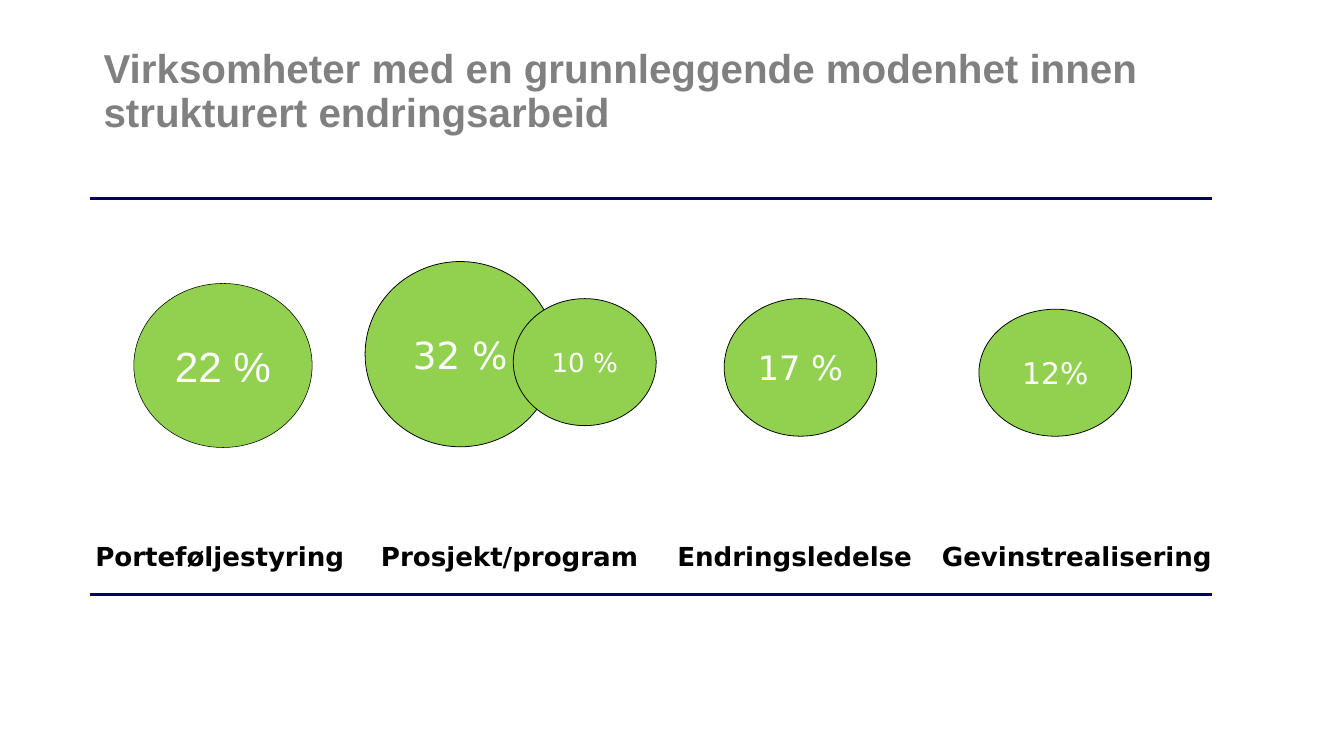
from dataclasses import dataclass

from lxml import etree
from pptx import Presentation
from pptx.dml.color import RGBColor
from pptx.enum.shapes import MSO_CONNECTOR, MSO_SHAPE
from pptx.enum.text import MSO_ANCHOR, MSO_AUTO_SIZE, PP_ALIGN
from pptx.oxml.ns import qn
from pptx.util import Inches, Pt

OVAL = MSO_SHAPE.OVAL
LINE = MSO_CONNECTOR.STRAIGHT
MID, LOW, TOP = MSO_ANCHOR.MIDDLE, MSO_ANCHOR.BOTTOM, MSO_ANCHOR.TOP
LEFT, CENTER = PP_ALIGN.LEFT, PP_ALIGN.CENTER
GROW, FIXED = MSO_AUTO_SIZE.SHAPE_TO_FIT_TEXT, MSO_AUTO_SIZE.NONE


@dataclass(frozen=True)
class Theme:
    """Hold the colours, fonts and type sizes of the slide."""
    gray: str = "808080"
    navy: str = "000066"
    green: str = "92D050"
    black: str = "000000"
    white: str = "FFFFFF"
    sans: str = "Arial"
    wide: str = "DejaVu Sans"
    head: float = 38.4
    label: float = 24.9


@dataclass(frozen=True)
class Box:
    """Describe an area in inches, divided into 100 columns and 100 rows."""
    left: float
    top: float
    width: float
    height: float

    def cell(self, col, row, cols, rows):
        """Return the area that starts at a column and row."""
        return Box(self.left + self.width * col / 100,
                   self.top + self.height * row / 100,
                   self.width * cols / 100, self.height * rows / 100)

    def place(self):
        """Return left, top, width and height as lengths."""
        return [Inches(n) for n in (self.left, self.top, self.width, self.height)]


THEME = Theme()
TITLE = "Virksomheter med en grunnleggende modenhet innen strukturert endringsarbeid"
LABELS = [("Porteføljestyring", 0), ("Prosjekt/program", 25.47),
          ("Endringsledelse", 51.89), ("Gevinstrealisering", 75.47)]
BUBBLES = [
    ("22 %", 3.91, 21.41, 15.9, 41.49, 40.2, THEME.sans, 0.5),
    ("32 %", 24.53, 15.87, 16.98, 46.85, 35.5, THEME.wide, 0.75),
    ("10 %", 37.74, 25.24, 12.74, 32.12, 24.9, THEME.wide, 0.75),
    ("17 %", 56.54, 25.24, 13.61, 34.8, 32, THEME.wide, 0.75),
    ("12%", 79.25, 27.92, 13.61, 32.12, 28.4, THEME.wide, 0.75),
]


def write(shape, text, size, color, font=THEME.wide, bold=False, align=LEFT,
          anchor=TOP, pad=None, lead=None, after=0, fit=FIXED):
    """Fill a shape with one formatted paragraph and return it."""
    frame = shape.text_frame
    frame.word_wrap = True
    frame.auto_size = fit
    frame.vertical_anchor = anchor
    if pad is not None:
        frame.margin_left = Inches(pad)
        frame.margin_top = frame.margin_right = frame.margin_bottom = 0
    para = frame.paragraphs[0]
    para.alignment = align
    para.line_spacing = lead
    para.space_before = 0
    para.space_after = Pt(after)
    run = para.add_run()
    run.text = text
    run.font.name = font
    run.font.size = Pt(size)
    run.font.bold = bold
    run.font.color.rgb = RGBColor.from_string(color)
    return para


def heading(slide, box):
    """Place the title in its placeholder."""
    title = slide.shapes.title
    title.left, title.top, title.width, title.height = box.place()
    write(title, TITLE, THEME.head, THEME.gray, font=THEME.sans, bold=True,
          anchor=LOW, pad=0, lead=0.9)


def rules(slide, box):
    """Draw a line along the bottom and the top of the box."""
    left, top, width, height = box.place()
    for y in (top + height, top):
        rule = slide.shapes.add_connector(LINE, left, y, left + width, y)
        rule.line.color.rgb = RGBColor.from_string(THEME.navy)
        rule.line.width = Pt(3)
        etree.SubElement(rule._element.spPr, qn("a:effectLst"))


def labels(slide, box):
    """Set the names of the four areas in a row."""
    for text, col in LABELS:
        spot = slide.shapes.add_textbox(*box.cell(col, 84.13, 28.3, 8.99).place())
        para = write(spot, text, THEME.label, THEME.black, bold=True, pad=0.07,
                     lead=Pt(38.5), after=26.7, fit=GROW)
        props = para._p.get_or_add_pPr()
        props.set("marL", str(Inches(0.02)))
        props.set("indent", str(Inches(-0.05)))


def bubbles(slide, box):
    """Draw the ovals that carry the shares."""
    for text, col, row, cols, rows, size, font, edge in BUBBLES:
        oval = slide.shapes.add_shape(OVAL, *box.cell(col, row, cols, rows).place())
        oval.shadow.inherit = False
        oval.fill.solid()
        oval.fill.fore_color.rgb = RGBColor.from_string(THEME.green)
        oval.line.color.rgb = RGBColor.from_string(THEME.black)
        oval.line.width = Pt(edge)
        write(oval, text, size, THEME.white, font=font, align=CENTER, anchor=MID)


def main():
    """Build the slide and save it."""
    deck = Presentation()
    deck.slide_width, deck.slide_height = Inches(17.78), Inches(10)
    slide = deck.slides.add_slide(deck.slide_layouts[5])
    band = Box(1.19, 2.63, 14.84, 5.23)
    heading(slide, Box(1.37, 1.04, 14.01, 0.76))
    for draw in (rules, labels, bubbles):
        draw(slide, band)
    deck.save("out.pptx")


if __name__ == "__main__":
    main()
